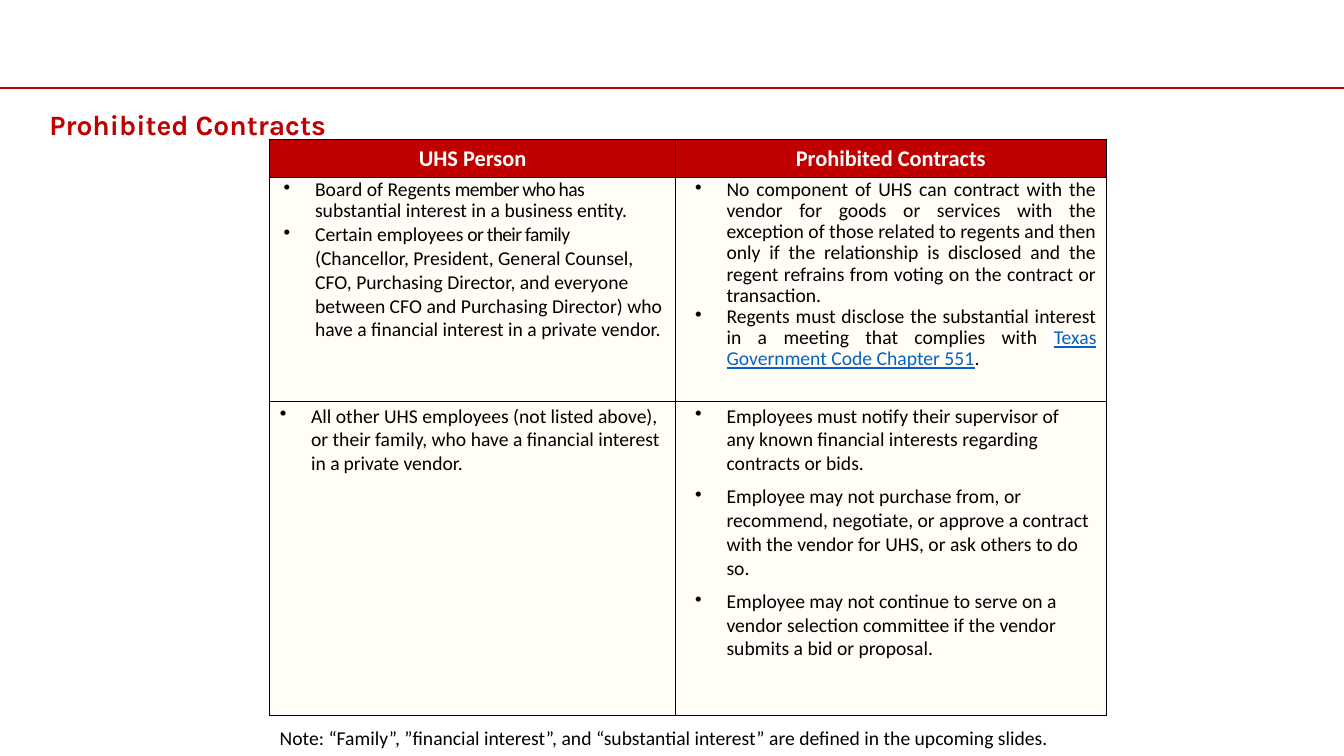
from dataclasses import dataclass

from lxml.etree import SubElement
from pptx import Presentation
from pptx.dml.color import RGBColor
from pptx.enum.shapes import MSO_CONNECTOR
from pptx.enum.text import MSO_ANCHOR, MSO_AUTO_SIZE, PP_ALIGN
from pptx.oxml.ns import qn
from pptx.slide import Slide
from pptx.table import _Cell
from pptx.text.text import _Paragraph, _Run
from pptx.util import Cm, Pt

RED, BLACK, WHITE, CREAM, LINK_BLUE = "C00000", "000000", "FFFFFF", "FFF9D9", "0563C1"
BODY_FONT, TITLE_FONT = "Calibri", "Karla"
HANGING = 0.79
COLUMN_WIDTHS = (10.22, 10.86)
ROW_HEIGHTS = (0.96, 5.64, 7.92)
HEADINGS = ("UHS Person", "Prohibited Contracts")


@dataclass(frozen=True)
class Piece:
    """A stretch of text with its letter spacing in points."""

    text: str
    spacing: float = 0
    linked: bool = False


@dataclass(frozen=True)
class Item:
    """A bulleted paragraph; indents are in centimetres, spacing in points."""

    pieces: tuple[Piece, ...]
    indent: float
    right_indent: float = 0
    line_spacing: float | None = None
    space_before: float = 0
    justified: bool = False


BODY_ROWS: tuple[tuple[tuple[Item, ...], ...], ...] = (
    (
        (
            Item((Piece("Board of Regents"), Piece(" member who has ", -0.5),
                  Piece("substantial interest in a business entity.")), 0.89, line_spacing=15.1),
            Item((Piece("Certain employees"), Piece(" or their family (", -0.5),
                  Piece("Chancellor, President, General Counsel, CFO, Purchasing Director, "
                        "and everyone between CFO and Purchasing Director) who have a "
                        "financial interest in a private vendor.")), 0.89),
        ),
        (
            Item((Piece("No component of UHS can contract with the vendor for goods or services "
                        "with the exception of those related to regents and then only if the "
                        "relationship is disclosed and the regent refrains from voting on the "
                        "contract or transaction."),), 1.04, line_spacing=15.1, justified=True),
            Item((Piece("Regents must disclose the substantial interest in a meeting that "
                        "complies with "),
                  Piece("Texas Government Code Chapter 551", linked=True),
                  Piece(".")), 1.04, line_spacing=15.1, justified=True),
        ),
    ),
    (
        (
            Item((Piece("All other UHS employees (not listed above), or their family, who have "
                        "a financial interest in "), Piece("a ", -0.5),
                  Piece("private vendor.")), 0.79),
        ),
        (
            Item((Piece("Employees must notify their supervisor of any known financial "
                        "interests regarding contracts or bids."),), 1.04, right_indent=0.9),
            Item((Piece("Employee may not purchase from, or recommend, negotiate, or approve a "
                        "contract with the vendor for UHS, or ask others to do so."),),
                 1.04, space_before=6.5),
            Item((Piece("Employee may not continue to serve on a vendor selection committee if "
                        "the vendor submits a bid or proposal."),), 1.04, space_before=6.5),
        ),
    ),
)


def colour(value: str) -> RGBColor:
    """Turn a hex string into a colour."""
    return RGBColor.from_string(value)


def format_run(run: _Run, size: float, shade: str, bold: bool = False,
               name: str = BODY_FONT) -> None:
    """Set the font of a run."""
    run.font.name = name
    run.font.size = Pt(size)
    run.font.bold = bold
    run.font.color.rgb = colour(shade)


def write_item(paragraph: _Paragraph, item: Item) -> None:
    """Write one bulleted paragraph."""
    properties = paragraph._p.get_or_add_pPr()
    properties.set("marL", str(Cm(item.indent)))
    properties.set("marR", str(Cm(item.right_indent)))
    properties.set("indent", str(-Cm(HANGING)))
    SubElement(properties, qn("a:buChar")).set("char", "•")
    paragraph.alignment = PP_ALIGN.JUSTIFY if item.justified else PP_ALIGN.LEFT
    paragraph.space_before = Pt(item.space_before)
    if item.line_spacing:
        paragraph.line_spacing = Pt(item.line_spacing)
    for piece in item.pieces:
        run = paragraph.add_run()
        run.text = piece.text
        format_run(run, 14, LINK_BLUE if piece.linked else BLACK)
        run.font.underline = piece.linked
        if piece.spacing:
            run._r.get_or_add_rPr().set("spc", str(round(piece.spacing * 100)))


def style_cell(cell: _Cell, fill: str, opacity: int = 100) -> None:
    """Give a cell its margins, black borders and fill."""
    cell.margin_left = cell.margin_right = Cm(0.25)
    cell.margin_top = cell.margin_bottom = Cm(0.08)
    properties = cell._tc.get_or_add_tcPr()
    for side in ("a:lnL", "a:lnR", "a:lnT", "a:lnB"):
        border = SubElement(properties, qn(side), w=str(Pt(1)))
        SubElement(SubElement(border, qn("a:solidFill")), qn("a:srgbClr"), val=BLACK)
    cell.fill.solid()
    cell.fill.fore_color.rgb = colour(fill)
    if opacity < 100:
        shade = properties.find(qn("a:solidFill")).find(qn("a:srgbClr"))
        SubElement(shade, qn("a:alpha"), val=str(opacity * 1000))


def add_rule(slide: Slide, width: int) -> None:
    """Draw the red line across the top."""
    rule = slide.shapes.add_connector(MSO_CONNECTOR.STRAIGHT, 0, Cm(2.21), width, Cm(2.21))
    rule.line.color.rgb = colour(RED)
    rule.line.width = Pt(1.5)
    SubElement(rule._element.spPr, qn("a:effectLst"))


def add_title(slide: Slide) -> None:
    """Place and format the title."""
    title = slide.shapes.title
    title.left, title.top, title.width, title.height = Cm(0.99), Cm(2.51), Cm(31.9), Cm(1.45)
    text_frame = title.text_frame
    text_frame.text = "Prohibited Contracts"
    text_frame.vertical_anchor = MSO_ANCHOR.TOP
    text_frame.margin_top = Cm(0.2)
    paragraph = text_frame.paragraphs[0]
    paragraph.alignment = PP_ALIGN.LEFT
    paragraph.line_spacing = 1.0
    format_run(paragraph.runs[0], 20, RED, bold=True, name=TITLE_FONT)


def add_contract_table(slide: Slide) -> None:
    """Build the table of persons and prohibited contracts."""
    table = slide.shapes.add_table(
        len(ROW_HEIGHTS), len(COLUMN_WIDTHS), Cm(6.8), Cm(3.51),
        Cm(sum(COLUMN_WIDTHS)), Cm(sum(ROW_HEIGHTS))).table
    for column, width in zip(table.columns, COLUMN_WIDTHS):
        column.width = Cm(width)
    for row, height in zip(table.rows, ROW_HEIGHTS):
        row.height = Cm(height)
    for cell, heading in zip(table.rows[0].cells, HEADINGS):
        style_cell(cell, RED)
        cell.vertical_anchor = MSO_ANCHOR.MIDDLE
        cell.text_frame.text = heading
        paragraph = cell.text_frame.paragraphs[0]
        paragraph.alignment = PP_ALIGN.CENTER
        format_run(paragraph.runs[0], 16, WHITE, bold=True)
    for row_index, lists in enumerate(BODY_ROWS, start=1):
        for cell, items in zip(table.rows[row_index].cells, lists):
            style_cell(cell, CREAM, opacity=24)
            for index, item in enumerate(items):
                text_frame = cell.text_frame
                write_item(text_frame.add_paragraph() if index else text_frame.paragraphs[0], item)


def add_note(slide: Slide) -> None:
    """Write the note under the table."""
    text_frame = slide.shapes.add_textbox(Cm(6.8), Cm(18.16), Cm(27), Cm(0.86)).text_frame
    text_frame.word_wrap = True
    text_frame.auto_size = MSO_AUTO_SIZE.SHAPE_TO_FIT_TEXT
    text_frame.text = ("Note: “Family”, ”financial interest”, and “substantial interest” "
                       "are defined in the upcoming slides.")
    format_run(text_frame.paragraphs[0].runs[0], 14, BLACK)


def main() -> None:
    """Build and save the slide."""
    presentation = Presentation()
    presentation.slide_width, presentation.slide_height = Cm(33.87), Cm(19.05)
    slide = presentation.slides.add_slide(presentation.slide_layouts[5])
    add_rule(slide, presentation.slide_width)
    add_title(slide)
    add_contract_table(slide)
    add_note(slide)
    presentation.save("out.pptx")


if __name__ == "__main__":
    main()
